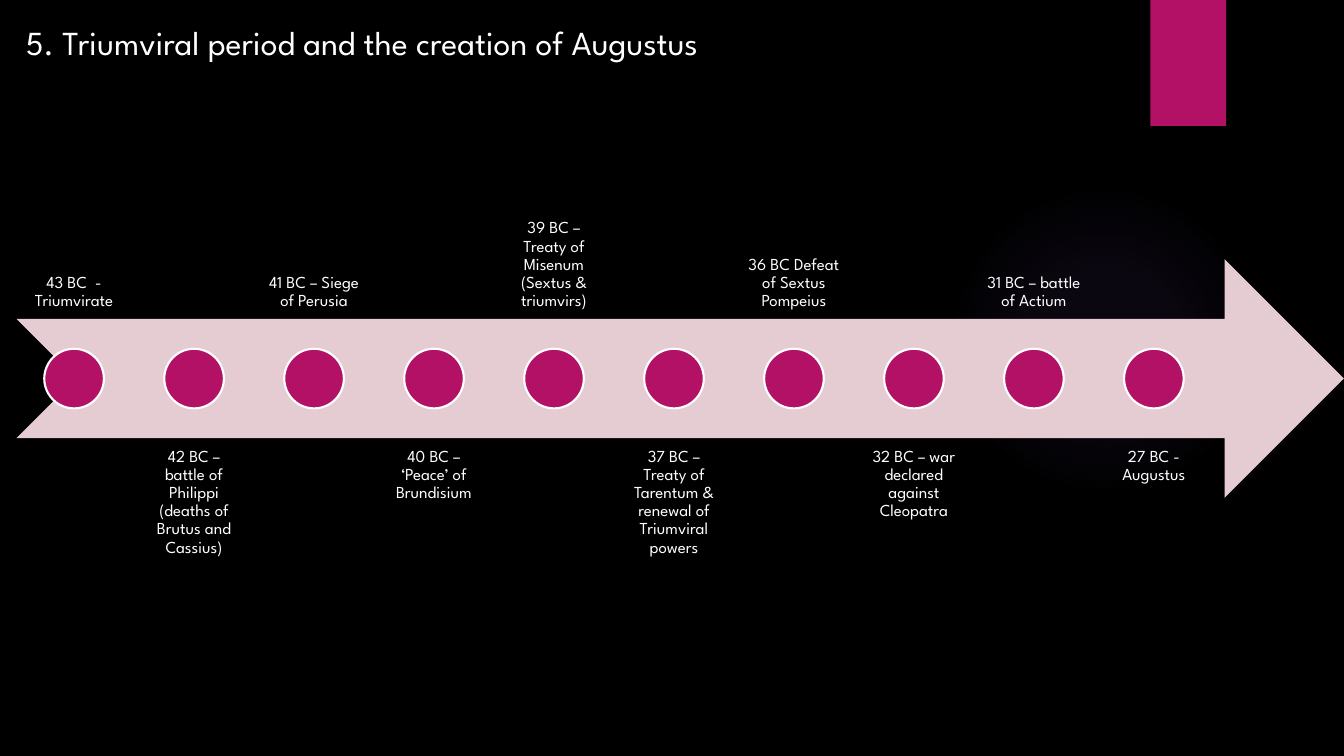
from pptx import Presentation
from pptx.dml.color import RGBColor
from pptx.enum.shapes import MSO_SHAPE
from pptx.enum.text import MSO_ANCHOR, PP_ALIGN
from pptx.oxml import parse_xml
from pptx.oxml.ns import nsdecls, qn
from pptx.util import Pt

OVAL, RECT, ARROW = MSO_SHAPE.OVAL, MSO_SHAPE.RECTANGLE, MSO_SHAPE.NOTCHED_RIGHT_ARROW
TOP, BOTTOM = MSO_ANCHOR.TOP, MSO_ANCHOR.BOTTOM
LEFT, CENTER = PP_ALIGN.LEFT, PP_ALIGN.CENTER

FONT = "League Spartan"
COLORS = {"black": "000000", "white": "FFFFFF", "magenta": "B31166",
          "pink": "E5CCD3", "glow": "9B6BF2"}
GLOW_STOPS = [(0, 7), (36, 6), (69, 0)]  # position %, opacity %

EVENTS = [
    "43 BC  - Triumvirate",
    "42 BC – battle of Philippi (deaths of Brutus and Cassius)",
    "41 BC – Siege of Perusia",
    "40 BC – ‘Peace’ of Brundisium",
    "39 BC – Treaty of Misenum (Sextus & triumvirs)",
    "37 BC – Treaty of Tarentum & renewal of Triumviral powers",
    "36 BC Defeat of Sextus Pompeius",
    "32 BC – war declared against Cleopatra",
    "31 BC – battle of Actium",
    "27 BC - Augustus",
]
FIRST_CENTER, STEP = 52.92, 85.7
LABEL_W, BAND_H, DOT = 81.4, 170.6, 42.6
ARROW_TOP = 185.1
AXIS = ARROW_TOP + BAND_H / 2

prs = Presentation()
prs.slide_width, prs.slide_height = Pt(960), Pt(540)
slide = prs.slides.add_slide(prs.slide_layouts[6])
slide.background.fill.solid()
slide.background.fill.fore_color.rgb = RGBColor.from_string(COLORS["black"])


def add_shape(kind, left, top, width, height, color):
    sp = slide.shapes.add_shape(kind, Pt(left), Pt(top), Pt(width), Pt(height))
    sp.shadow.inherit = False
    sp.fill.solid()
    sp.fill.fore_color.rgb = RGBColor.from_string(COLORS[color])
    sp.line.fill.background()
    return sp


def add_text(text, left, top, width, height, size, align, anchor):
    tb = slide.shapes.add_textbox(Pt(left), Pt(top), Pt(width), Pt(height))
    tf = tb.text_frame
    tf.word_wrap = True
    tf.vertical_anchor = anchor
    tf.text = text
    p = tf.paragraphs[0]
    p.alignment = align
    font = p.runs[0].font
    font.name, font.size = FONT, Pt(size)
    font.color.rgb = RGBColor.from_string(COLORS["white"])
    return tf


# Background glow and corner tab
glow = add_shape(OVAL, 677.5, 131.8, 221.8, 221.8, "glow")
stops = "".join(
    f'<a:gs pos="{pos * 1000}"><a:srgbClr val="{COLORS["glow"]}">'
    f'<a:alpha val="{alpha * 1000}"/></a:srgbClr></a:gs>'
    for pos, alpha in GLOW_STOPS)
gradient = parse_xml(
    f'<a:gradFill {nsdecls("a")}><a:gsLst>{stops}</a:gsLst><a:path path="circle">'
    '<a:fillToRect l="50000" t="50000" r="50000" b="50000"/></a:path></a:gradFill>')
spPr = glow.element.spPr
spPr.replace(spPr.find(qn("a:solidFill")), gradient)
add_shape(RECT, 821.8, 0, 54, 90, "magenta")

# Timeline: labels alternate above and below the arrow
add_shape(ARROW, 11.8, ARROW_TOP, 948.2, BAND_H, "pink")
for i, event in enumerate(EVENTS):
    center = FIRST_CENTER + i * STEP
    top, anchor = (57.6, BOTTOM) if i % 2 == 0 else (313.2, TOP)
    tf = add_text(event, center - LABEL_W / 2, top, LABEL_W, BAND_H, 12, CENTER, anchor)
    tf.margin_left = tf.margin_right = tf.margin_top = tf.margin_bottom = Pt(6.72)
    tf.paragraphs[0].line_spacing = 0.9
    dot = add_shape(OVAL, center - DOT / 2, AXIS - DOT / 2, DOT, DOT, "magenta")
    dot.line.color.rgb = RGBColor.from_string(COLORS["white"])
    dot.line.width = Pt(1.5)

add_text("5. Triumviral period and the creation of Augustus",
         11.5, 12.2, 581, 36, 24, LEFT, TOP)

prs.save("out.pptx")
